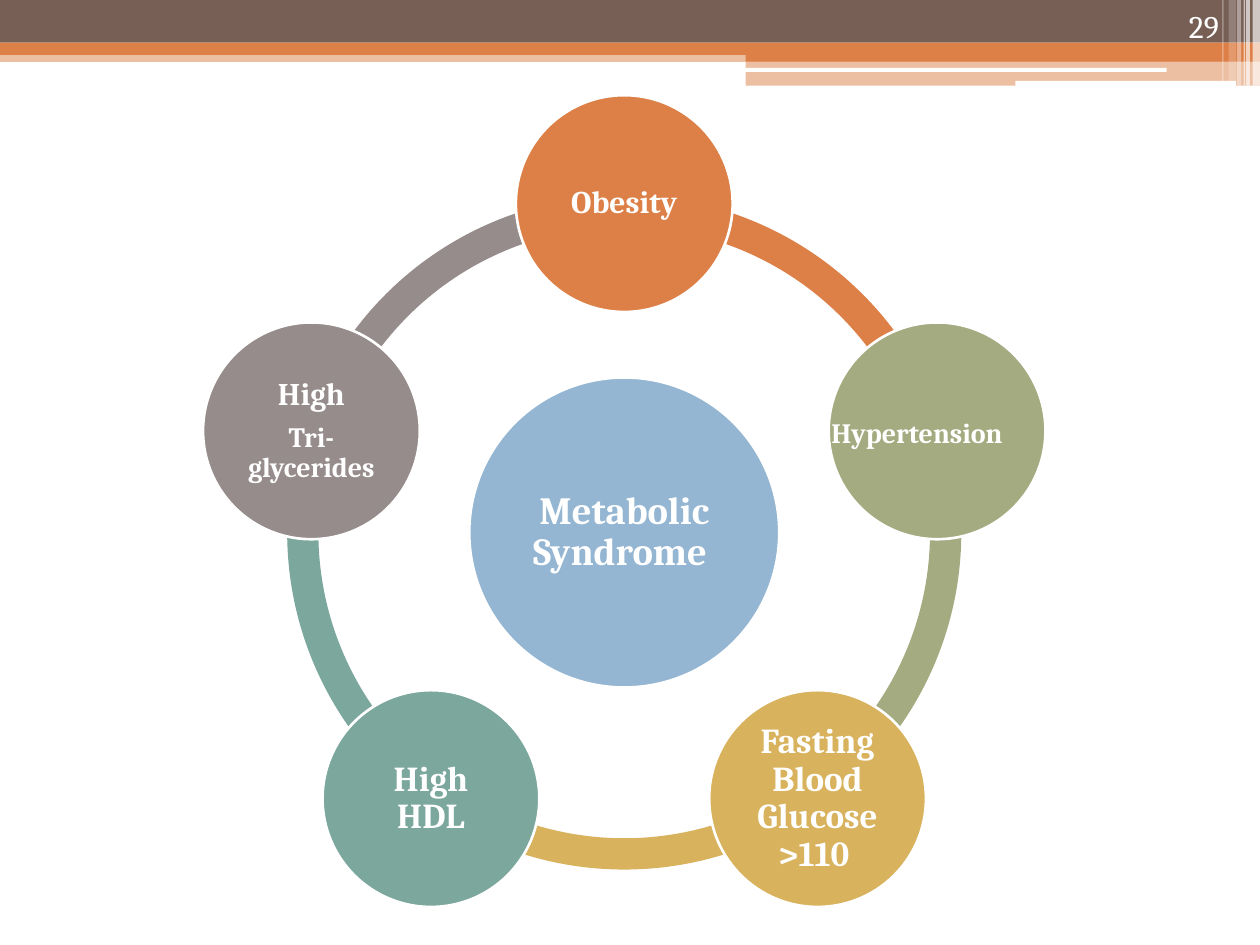
from dataclasses import dataclass
from math import cos, radians, sin

from lxml.etree import SubElement
from pptx import Presentation
from pptx.dml.color import RGBColor
from pptx.enum.shapes import MSO_SHAPE as Shape
from pptx.enum.text import MSO_ANCHOR as Anchor, PP_ALIGN as Align
from pptx.oxml.ns import qn
from pptx.util import Cm, Pt


@dataclass(frozen=True)
class Theme:
    font: str = "Cambria"
    white: str = "FFFFFF"
    brown: str = "775F55"
    orange: str = "DD8047"
    olive: str = "A5AB81"
    gold: str = "D8B25C"
    teal: str = "7BA79D"
    grey: str = "968C8C"
    blue: str = "94B6D2"
    hub_size: int = 22
    large: int = 20
    medium: int = 18
    small: int = 16
    outline: float = 1.5


THEME = Theme()

# Header parts: left, top, width, height (cm), colour, opacity in percent
HEADER_BARS = [
    (0, 1.02, 25.4, 0.23, THEME.orange, 50),
    (0, 0, 25.4, 0.86, THEME.brown, 100),
    (0, 0.86, 25.4, 0.25, THEME.orange, 100),
    (15.03, 0.99, 10.37, 0.25, THEME.orange, 100),
    (15.03, 1.23, 10.37, 0.5, THEME.orange, 50),
]
HEADER_LINES = [(15.01, 1.37, 8.51, 0.08), (20.47, 1.63, 4.45, 0.1)]
# Stripes: left, width, height (cm), opacity in percent
HEADER_STRIPES = [
    (25.25, 0.15, 1.73, 65), (25.12, 0.08, 1.73, 65),
    (25.07, 0.03, 1.73, 60), (24.94, 0.08, 1.73, 40),
    (24.77, 0.15, 1.63, 20), (24.64, 0.03, 1.63, 30),
]

# Clockwise from the top: colour, lines of (text, size)
FACTORS = [
    (THEME.orange, [("Obesity", THEME.medium)]),
    (THEME.olive, []),  # labelled by a wider text box
    (THEME.gold, [("Fasting Blood Glucose >110 ", THEME.large)]),
    (THEME.teal, [("High HDL", THEME.large)]),
    (THEME.grey, [("High", THEME.medium), ("Tri-glycerides", THEME.small)]),
]


def add_filled(page, kind, box, color, opacity=100, outlined=False):
    shape = page.shapes.add_shape(kind, *(Cm(length) for length in box))
    shape.shadow.inherit = False
    shape.fill.solid()
    shape.fill.fore_color.rgb = RGBColor.from_string(color)
    if opacity < 100:
        color_node = shape.fill._xPr.find(".//" + qn("a:srgbClr"))
        SubElement(color_node, qn("a:alpha"), val=str(opacity * 1000))
    if outlined:
        shape.line.color.rgb = RGBColor.from_string(THEME.white)
        shape.line.width = Pt(THEME.outline)
    else:
        shape.line.fill.background()
    return shape


def style_para(para, text, size, align, bold=True):
    para.alignment = align
    para.font.name = THEME.font
    para.font.size = Pt(size)
    para.font.bold = bold
    para.font.color.rgb = RGBColor.from_string(THEME.white)
    span = para.add_run()
    span.text = text
    return span


def add_text_box(page, box, text, size, align, anchor, bold=True):
    text_box = page.shapes.add_textbox(*(Cm(length) for length in box))
    frame = text_box.text_frame
    frame.word_wrap = True
    frame.vertical_anchor = anchor
    return style_para(frame.paragraphs[0], text, size, align, bold)


def add_circle(page, center_x, center_y, size, color, lines):
    box = (center_x - size / 2, center_y - size / 2, size, size)
    circle = add_filled(page, Shape.OVAL, box, color, outlined=True)
    frame = circle.text_frame
    frame.word_wrap = True
    frame.vertical_anchor = Anchor.MIDDLE
    frame.margin_left = frame.margin_right = Cm(0.08)
    frame.margin_top = frame.margin_bottom = Cm(0.08)
    for index, (text, text_size) in enumerate(lines):
        para = frame.add_paragraph() if index else frame.paragraphs[0]
        style_para(para, text, text_size, Align.CENTER)
        para.line_spacing = 0.9
        para.space_after = Pt(text_size * 0.35)


def add_text_shadow(span):
    effects = SubElement(span.font._element, qn("a:effectLst"))
    shadow = SubElement(effects, qn("a:outerShdw"), blurRad="38100",
                        dist="38100", dir="2700000", algn="tl")
    color = SubElement(shadow, qn("a:srgbClr"), val="000000")
    SubElement(color, qn("a:alpha"), val="43000")


def build_header(page, left, top):
    for x, y, width, height, color, opacity in HEADER_BARS:
        add_filled(page, Shape.RECTANGLE, (left + x, top + y, width, height),
                   color, opacity)
    for x, y, width, height in HEADER_LINES:
        add_filled(page, Shape.ROUNDED_RECTANGLE,
                   (left + x, top + y, width, height), THEME.white)
    for x, width, height, opacity in HEADER_STRIPES:
        add_filled(page, Shape.RECTANGLE, (left + x, top, width, height),
                   THEME.white, opacity)
    # Page number
    add_text_box(page, (left + 22.71, top, 2.11, 1.02), "29", THEME.medium,
                 Align.RIGHT, Anchor.BOTTOM, bold=False)


def build_cycle(page, left, top, size):
    """Ring of factors around a hub, within a square that holds the ring."""
    center_x, center_y = left + size / 2, top + size / 2
    orbit, node_size, hub_size, thickness = 6.63, 4.37, 6.25, 0.63
    step = 360 / len(FACTORS)
    angles = [(270 + step * index) % 360 for index in range(len(FACTORS))]

    # Ring segments; angle adjustments count 0.6 per degree
    for angle, (color, _) in reversed(list(zip(angles, FACTORS))):
        arc = add_filled(page, Shape.BLOCK_ARC, (left, top, size, size), color)
        arc.adjustments[0] = angle * 0.6
        arc.adjustments[1] = (angle + step) % 360 * 0.6
        arc.adjustments[2] = thickness / size

    # Hub and factor circles
    add_circle(page, center_x, center_y, hub_size, THEME.blue,
               [("Metabolic Syndrome ", THEME.hub_size)])
    for angle, (color, lines) in zip(angles, FACTORS):
        add_circle(page, center_x + orbit * cos(radians(angle)),
                   center_y + orbit * sin(radians(angle)),
                   node_size, color, lines)

    # Label of the second factor
    span = add_text_box(page, (left + 10.72, top + 4.32, 5.66, 0.94),
                        "Hypertension", THEME.small, Align.LEFT, Anchor.TOP)
    add_text_shadow(span)


def main():
    deck = Presentation()
    deck.slide_width, deck.slide_height = Cm(25.4), Cm(19.05)
    page = deck.slides.add_slide(deck.slide_layouts[6])
    build_header(page, 0, 0)
    build_cycle(page, 5.79, 3.94, 13.59)
    deck.save("out.pptx")


if __name__ == "__main__":
    main()
